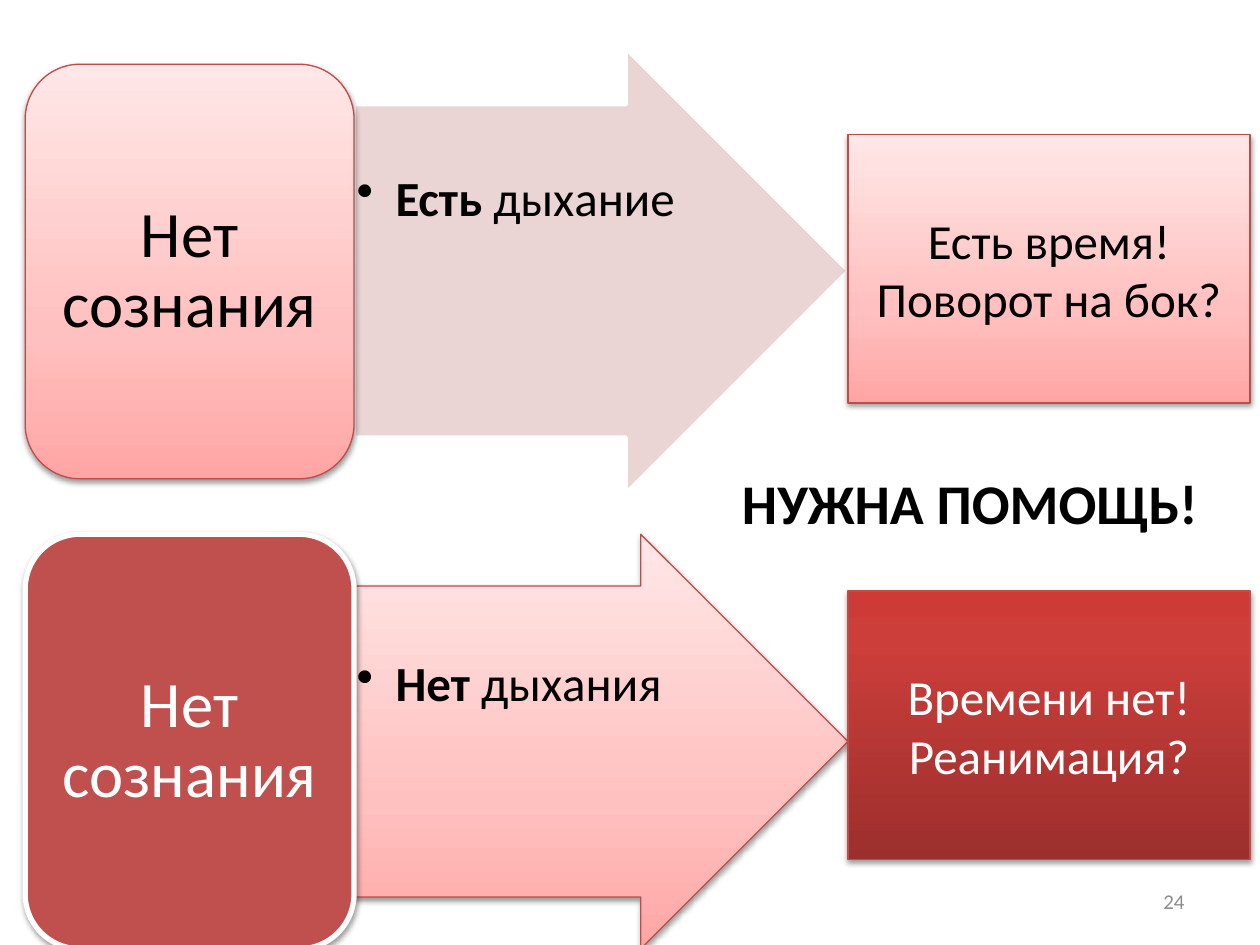
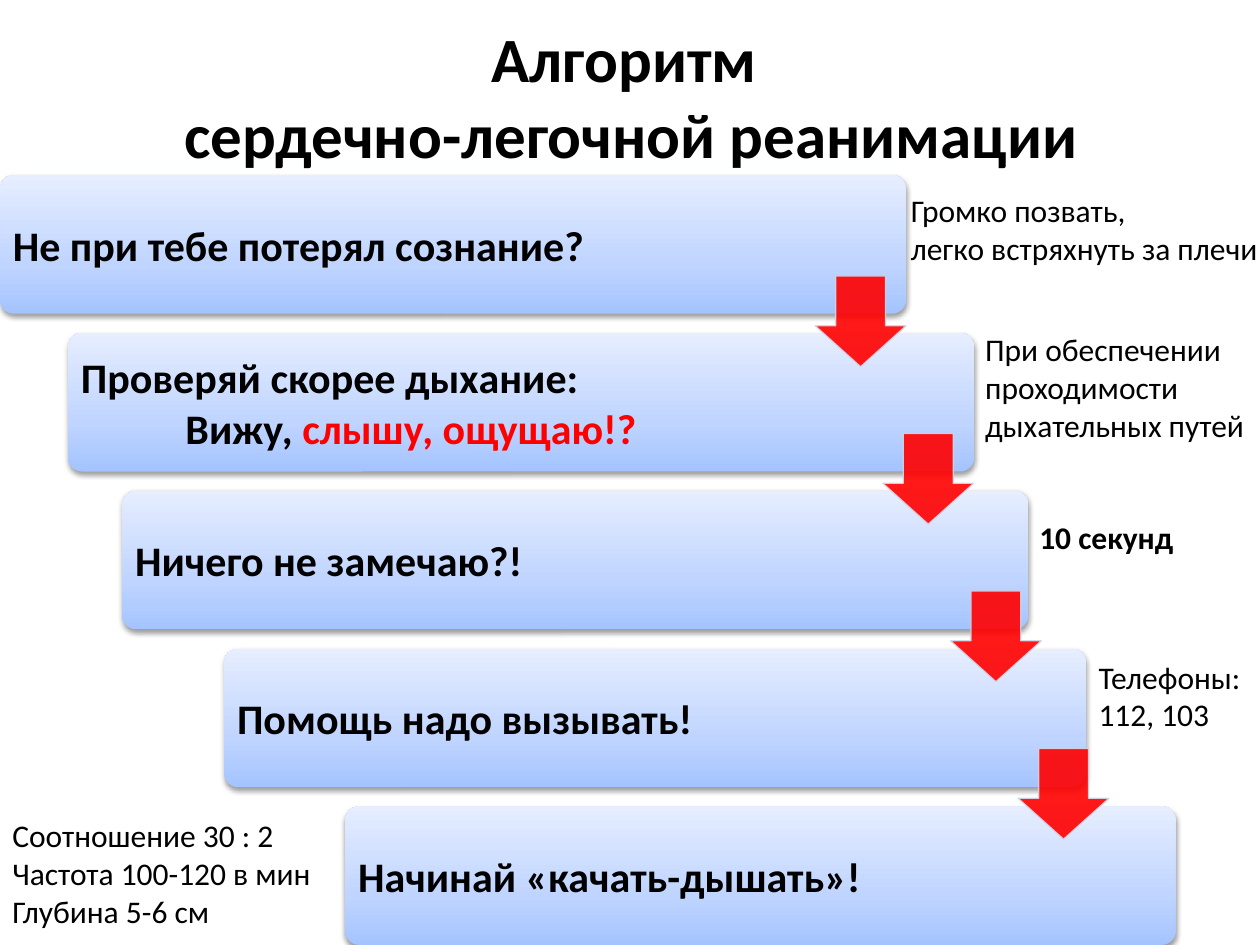
from pptx import Presentation
from pptx.util import Inches, Pt
from pptx.dml.color import RGBColor
from pptx.enum.shapes import MSO_SHAPE
from pptx.enum.text import PP_ALIGN, MSO_ANCHOR, MSO_AUTO_SIZE
from pptx.oxml import parse_xml
from pptx.oxml.ns import nsdecls, qn
from lxml.etree import SubElement

# Shared look
FONT = "Calibri"
HUE = {"ink": "000000", "white": "FFFFFF", "red": "FF0000", "brick": "C0504D",
       "edge": "BF4C48", "rose": "E8D0D0", "grey": "8C8C8C", "pale": "D0D8E8"}
GRAD = {
    "pink": [(0, "FFA6A5"), (35, "FFC0BF"), (100, "FFE7E7")],
    "dark": [(0, "9C2F2D"), (80, "CB3E3A"), (100, "CE3B37")],
    "blue": [(0, "A4C4FF"), (35, "BFD4FF"), (100, "E6EEFF")],
}

# Slide 1: state, breathing, action; text as paragraphs of (words, bold, colour)
STATE = "Нет сознания"
CASES = [
    dict(top=0.51, state=("pink", "edge", 0.75, "ink"),
         arrow=(0.39, 3.52, "rose", "white", 2),
         breath=[("Есть ", True), ("дыхание", False)],
         box=(1.07, "pink", "ink"), act=["Есть время!", "Поворот на бок?"]),
    dict(top=4.24, state=("brick", "white", 3, "white"),
         arrow=(4.24, 3.29, "pink", "edge", 0.75),
         breath=[("Нет", True), (" дыхания", False)],
         box=(4.69, "dark", "white"), act=["Времени нет!", "Реанимация?"]),
]
BREATH_TOPS = 1.36, 5.21
HELP = "НУЖНА ПОМОЩЬ!"
PAGE = "24"

# Slide 2: steps as (left, width, paragraphs), notes as (place, bold, lines)
TITLE = ["Алгоритм ", "сердечно-легочной реанимации"]
STEPS = [
    (0, 7.19, [[("Не при тебе потерял сознание?", True)]]),
    (0.54, 7.19, [[("Проверяй скорее дыхание:", True)],
                  [("Вижу, ", True), ("слышу, ощущаю!?", True, "red")]]),
    (0.97, 7.19, [[("Ничего не замечаю?!", True)]]),
    (1.78, 6.84, [[("Помощь надо вызывать!", True)]]),
    (2.74, 6.59, [[("Начинай «качать-дышать»!", True)]]),
]
NOTES = [
    ((7.13, 1.47, 2.99, 0.71), False, ["Громко позвать,", "легко встряхнуть за плечи"]),
    ((7.72, 2.57, 2.28, 1.01), False,
     ["При обеспечении", "проходимости", "дыхательных путей"]),
    ((8.15, 4.06, 1.28, 0.71), True, ["10 секунд"]),
    ((8.62, 5.17, 1.38, 0.71), False, ["Телефоны:", "112, 103"]),
    ((0, 6.43, 2.7, 1.31), False,
     ["Соотношение 30 : 2", "Частота 100-120 в мин", "Глубина 5-6 см"]),
]
STEP_TOP, STEP_HIGH = 1.39, 1.1
STEP_GAP = (7.5 - STEP_HIGH - STEP_TOP) / (len(STEPS) - 1)


def rgb(name):
    return RGBColor.from_string(HUE[name])


def plain(lines, bold=False):
    return [[(line, bold)] for line in lines]


def fade(part, share):
    for tint in part.iter(qn("a:srgbClr")):
        SubElement(tint, qn("a:alpha")).set("val", str(share * 1000))


def paint(shape, fill):
    if fill not in GRAD:
        shape.fill.solid()
        shape.fill.fore_color.rgb = rgb(fill)
        return
    shape.fill.gradient()
    shape.fill.gradient_angle = 90
    stops = next(shape.element.spPr.iter(qn("a:gsLst")))
    for stop in list(stops):
        stops.remove(stop)
    for pos, tint in GRAD[fill]:
        stop = SubElement(stops, qn("a:gs"))
        stop.set("pos", str(pos * 1000))
        SubElement(stop, qn("a:srgbClr")).set("val", tint)


def draw(slide, kind, place, fill, edge=None, width=0.75, adj=(), shade=38):
    shape = slide.shapes.add_shape(kind, *map(Inches, place))
    for i, part in enumerate(adj):
        shape.adjustments[i] = part
    paint(shape, fill)
    if edge:
        shape.line.color.rgb = rgb(edge)
        shape.line.width = Pt(width)
    else:
        shape.line.fill.background()
    shape.shadow.inherit = False
    if shade:
        shape.element.spPr.find(qn("a:effectLst")).append(parse_xml(
            f'<a:outerShdw {nsdecls("a")} blurRad="40000" dist="20000" dir="5400000"'
            f' rotWithShape="0"><a:srgbClr val="000000"><a:alpha val="{shade * 1000}"/>'
            '</a:srgbClr></a:outerShdw>'))
    return shape


def style(run, size, bold, hue):
    font = run.font
    font.name, font.size, font.bold = FONT, Pt(size), bold
    font.color.rgb = rgb(hue)


def write(shape, paras, size, hue="ink", align=PP_ALIGN.LEFT,
          anchor=MSO_ANCHOR.MIDDLE, inset=None, space=None, wrap=True):
    frame = shape.text_frame
    frame.word_wrap = wrap
    frame.vertical_anchor = anchor
    if inset is not None:
        frame.margin_left = frame.margin_right = Inches(inset)
        frame.margin_top = frame.margin_bottom = Inches(inset)
    for i, runs in enumerate(paras):
        para = frame.paragraphs[0] if i == 0 else frame.add_paragraph()
        para.alignment = align
        if space:
            para.line_spacing = space
        for words, bold, *own in runs:
            run = para.add_run()
            run.text = words
            style(run, size, bold, own[0] if own else hue)
    return frame


def label(slide, place, paras, size, **look):
    box = slide.shapes.add_textbox(*map(Inches, place))
    return write(box, paras, size, **look)


def indent(para, left, first=0):
    props = para._p.get_or_add_pPr()
    props.set("marL", str(Inches(left)))
    props.set("indent", str(Inches(first)))
    return props


def choice(deck):
    slide = deck.slides.add_slide(deck.slide_layouts[6])
    for case, high in zip(CASES, BREATH_TOPS):
        # Arrow with the breathing sign
        top, tall, fill, edge, width = case["arrow"]
        arrow = draw(slide, MSO_SHAPE.RIGHT_ARROW, (2.81, top, 3.92, tall), fill, edge,
                     width, (0.75, 0.5), 38 if fill in GRAD else 0)
        if fill not in GRAD:
            fade(arrow.element.spPr.find(qn("a:solidFill")), 90)
        frame = label(slide, (2.81, high, 3.92, 0.5), [case["breath"]], 28,
                      anchor=MSO_ANCHOR.TOP, inset=0.02, space=0.9)
        props = indent(frame.paragraphs[0], 0.31, -0.31)
        SubElement(props, qn("a:buChar")).set("char", "•")
        # Patient's state
        fill, edge, width, hue = case["state"]
        state = draw(slide, MSO_SHAPE.ROUNDED_RECTANGLE, (0.2, case["top"], 2.61, 3.29),
                     fill, edge, width)
        write(state, plain([STATE]), 37, hue, PP_ALIGN.CENTER, inset=0.02, space=0.9)
        # What to do
        top, fill, hue = case["box"]
        box = draw(slide, MSO_SHAPE.RECTANGLE, (6.73, top, 3.19, 2.13), fill, "edge")
        write(box, plain(case["act"]), 28, hue, PP_ALIGN.CENTER)
    label(slide, (5.79, 3.67, 3.85, 0.64), plain([HELP], True), 32,
          anchor=MSO_ANCHOR.TOP, wrap=False)
    label(slide, (7.17, 6.95, 2.33, 0.4), plain([PAGE]), 12, hue="grey",
          align=PP_ALIGN.RIGHT)


def stairs(deck):
    slide = deck.slides.add_slide(deck.slide_layouts[5])
    # Title
    title = slide.shapes.title
    title.left, title.top, title.width, title.height = map(Inches, (0.51, 0.13, 9, 1.25))
    title.text_frame.auto_size = MSO_AUTO_SIZE.NONE
    title.text_frame.vertical_anchor = MSO_ANCHOR.MIDDLE
    para = title.text_frame.paragraphs[0]
    para.alignment = PP_ALIGN.CENTER
    for i, line in enumerate(TITLE):
        if i:
            para.add_line_break()
        run = para.add_run()
        run.text = line
        style(run, 36, True, "ink")
    # Steps
    for i, (left, width, paras) in enumerate(STEPS):
        step = draw(slide, MSO_SHAPE.ROUNDED_RECTANGLE,
                    (left, STEP_TOP + i * STEP_GAP, width, STEP_HIGH), "blue", adj=(0.1,))
        frame = write(step, paras, 24, inset=0.07)
        for para in frame.paragraphs[1:]:
            indent(para, 0.83)
    # Arrows between the steps
    for i in range(len(STEPS) - 1):
        arrow = draw(slide, MSO_SHAPE.DOWN_ARROW,
                     (6.47 + i * 0.537, 2.19 + i * 1.25, 0.72, 0.72), "red", "pale",
                     adj=(0.45, 0.55), shade=0)
        arrow.adjustments[0], arrow.adjustments[1] = 0.55, 0.45
        fade(arrow.element.spPr, 90)
    # Notes
    for place, bold, lines in NOTES:
        label(slide, place, plain(lines, bold), 18, anchor=MSO_ANCHOR.TOP, wrap=False)


def main():
    deck = Presentation()
    deck.slide_width, deck.slide_height = Inches(10), Inches(7.5)
    choice(deck)
    stairs(deck)
    deck.save("out.pptx")


if __name__ == "__main__":
    main()
